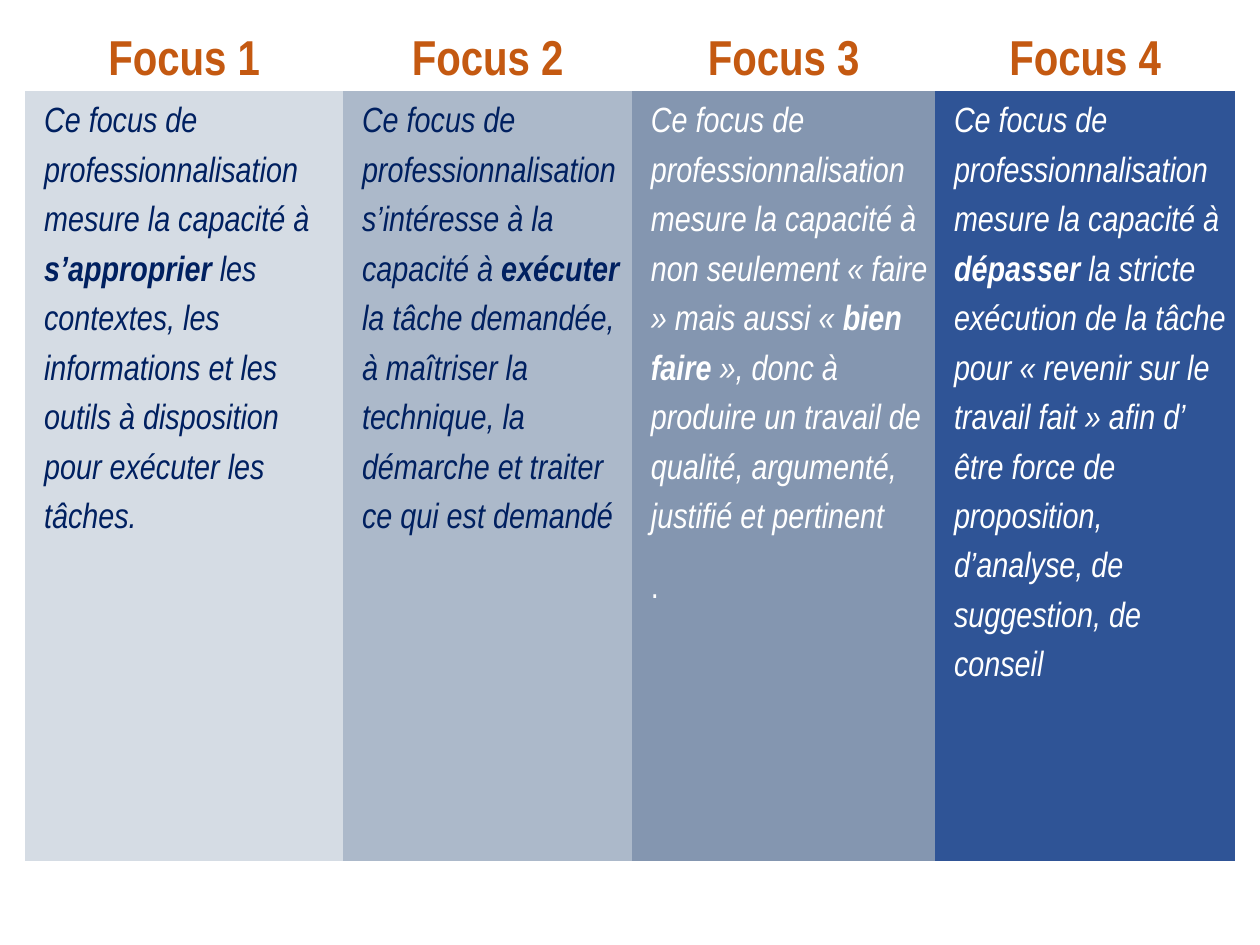
from dataclasses import dataclass

from pptx import Presentation
from pptx.dml.color import RGBColor
from pptx.enum.text import PP_ALIGN
from pptx.table import _Cell
from pptx.text.text import _Paragraph, _Run
from pptx.util import Pt


@dataclass(frozen=True)
class Theme:
    font: str = "Arial Narrow"
    head: str = "C45911"
    dark: str = "002060"
    light: str = "FFFFFF"
    head_size: float = 28
    body_size: float = 20
    plain: str = "{2D5ABB26-0587-4C30-8999-92F81FD0307C}"  # no style, no grid


@dataclass(frozen=True)
class Focus:
    width: float
    fill: str
    ink: str
    lead: str
    key: str
    rest: str
    end: str = ""


THEME = Theme()
LEFT, TOP = 14.4, 20.9
HEAD_H, BODY_H = 31, 440
INDENT = 7.2

ITEMS = [
    Focus(181.7, "D5DCE4", THEME.dark,
          "Ce focus de professionnalisation mesure la capacité à ",
          "s’approprier",
          " les contextes, les informations et les outils à disposition "
          "pour exécuter les tâches."),
    Focus(165.1, "ACB9CA", THEME.dark,
          "Ce focus de professionnalisation s’intéresse à la capacité à ",
          "exécuter",
          " la tâche demandée, à maîtriser la technique, la démarche et "
          "traiter ce qui est demandé"),
    Focus(173.2, "8496B0", THEME.light,
          "Ce focus de professionnalisation mesure la capacité à non "
          "seulement « faire » mais aussi « ",
          "bien faire",
          " », donc à produire un travail de qualité, argumenté, justifié "
          "et pertinent",
          "."),
    Focus(171.4, "2F5496", THEME.light,
          "Ce focus de professionnalisation mesure la capacité à ",
          "dépasser ",
          "la stricte exécution de la tâche pour « revenir sur le travail "
          "fait » afin d’ être force de proposition, d’analyse, de "
          "suggestion, de conseil"),
]


def style(run: _Run, size: float, ink: str, bold: bool, slant: bool) -> None:
    font = run.font
    font.name, font.size = THEME.font, Pt(size)
    font.bold, font.italic = bold, slant
    font.color.rgb = RGBColor.from_string(ink)


def inset(cell: _Cell) -> None:
    cell.margin_left = cell.margin_right = Pt(3.6)
    cell.margin_top = cell.margin_bottom = Pt(0)


def space(para: _Paragraph, before: float) -> None:
    para._p.get_or_add_pPr().set("marL", str(Pt(INDENT)))
    para.line_spacing = 1.5
    para.space_before, para.space_after = Pt(before), Pt(6)


def draw_head(cell: _Cell, text: str) -> None:
    inset(cell)
    cell.fill.background()
    cell.text_frame.text = text
    para = cell.text_frame.paragraphs[0]
    para.alignment, para.line_spacing = PP_ALIGN.CENTER, 1.07
    style(para.runs[0], THEME.head_size, THEME.head, True, False)


def draw_body(cell: _Cell, item: Focus) -> None:
    inset(cell)
    cell.fill.solid()
    cell.fill.fore_color.rgb = RGBColor.from_string(item.fill)
    frame = cell.text_frame
    frame.text = item.lead
    para = frame.paragraphs[0]
    space(para, 0)
    for text in (item.key, item.rest):
        para.add_run().text = text
    for run, bold in zip(para.runs, (False, True, False)):
        style(run, THEME.body_size, item.ink, bold, True)
    if item.end:
        last = frame.add_paragraph()
        last.text = item.end
        space(last, 6)
        style(last.runs[0], THEME.body_size, item.ink, False, False)


def main() -> None:
    deck = Presentation()
    deck.slide_width, deck.slide_height = Pt(720), Pt(540)
    slide = deck.slides.add_slide(deck.slide_layouts[6])

    # Table grid
    width = sum(item.width for item in ITEMS)
    table = slide.shapes.add_table(2, len(ITEMS), Pt(LEFT), Pt(TOP),
                                   Pt(width), Pt(HEAD_H + BODY_H)).table
    table.first_row = table.horz_banding = False
    table._tbl.tblPr[0].text = THEME.plain
    for row, height in zip(table.rows, (HEAD_H, BODY_H)):
        row.height = Pt(height)

    # One column per focus
    for col, item in enumerate(ITEMS):
        table.columns[col].width = Pt(item.width)
        draw_head(table.cell(0, col), f"Focus {col + 1}")
        draw_body(table.cell(1, col), item)

    deck.save("out.pptx")


if __name__ == "__main__":
    main()
